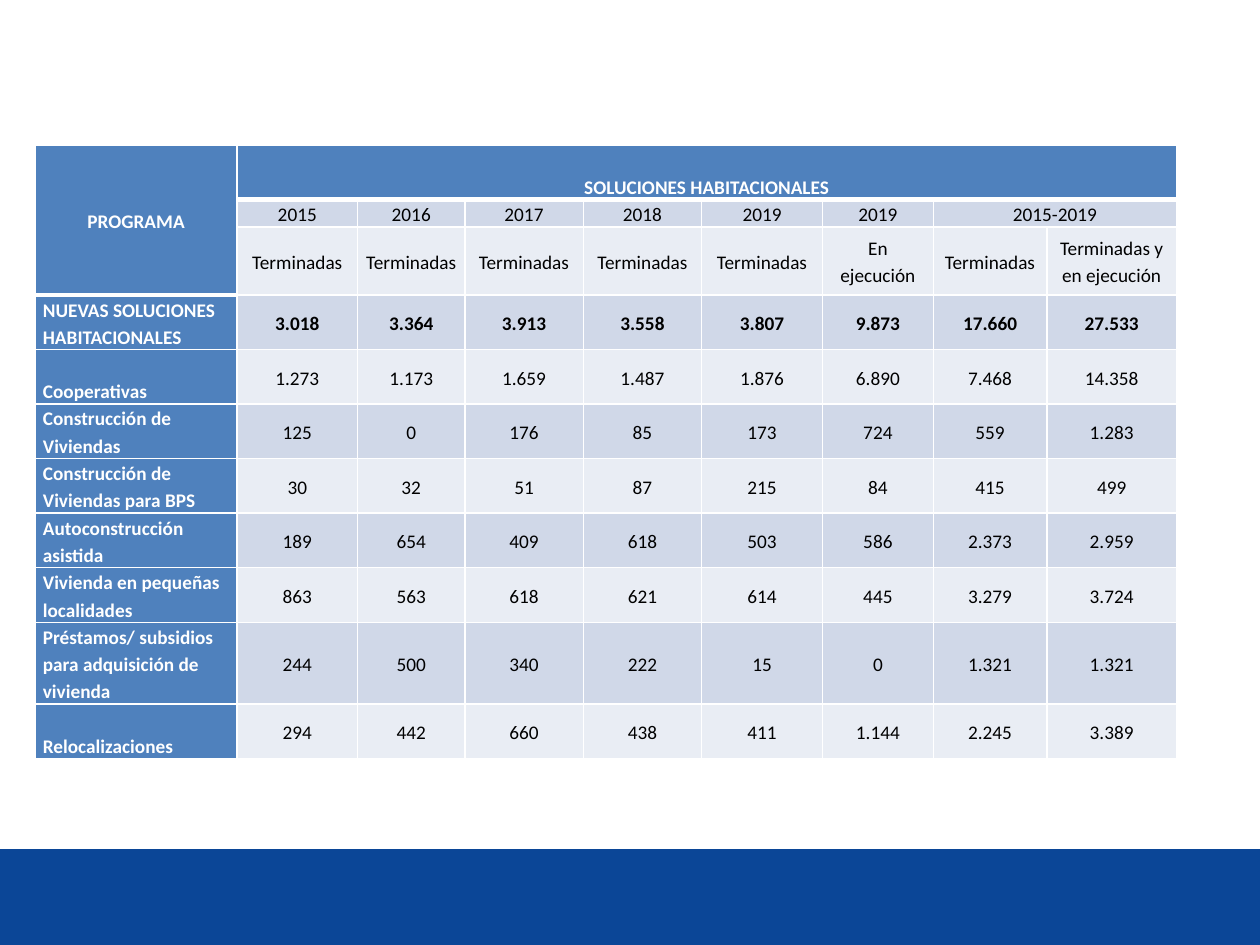
"""Build a slide with a table of housing solutions by programme and year."""
from lxml import etree
from pptx import Presentation
from pptx.dml.color import RGBColor
from pptx.enum.shapes import MSO_SHAPE
from pptx.enum.text import MSO_ANCHOR, PP_ALIGN
from pptx.oxml.ns import qn
from pptx.util import Pt

RECTANGLE = MSO_SHAPE.RECTANGLE
MIDDLE, BOTTOM = MSO_ANCHOR.MIDDLE, MSO_ANCHOR.BOTTOM
LEFT, CENTER = PP_ALIGN.LEFT, PP_ALIGN.CENTER

WHITE, BLACK = "FFFFFF", "000000"
FOOTER_BLUE, HEADER_BLUE = "0B4697", "4F81BD"
BANDS = ("D0D8E8", "E9EDF4")

YEARS = ["2015", "2016", "2017", "2018", "2019", "2019", "2015-2019", ""]
STATES = ["Terminadas"] * 5 + ["En ejecución", "Terminadas", "Terminadas y en ejecución"]
PROGRAMS = [
    ("NUEVAS SOLUCIONES HABITACIONALES",
     ["3.018", "3.364", "3.913", "3.558", "3.807", "9.873", "17.660", "27.533"]),
    ("Cooperativas",
     ["1.273", "1.173", "1.659", "1.487", "1.876", "6.890", "7.468", "14.358"]),
    ("Construcción de Viviendas",
     ["125", "0", "176", "85", "173", "724", "559", "1.283"]),
    ("Construcción de Viviendas para BPS",
     ["30", "32", "51", "87", "215", "84", "415", "499"]),
    ("Autoconstrucción asistida",
     ["189", "654", "409", "618", "503", "586", "2.373", "2.959"]),
    ("Vivienda en pequeñas localidades",
     ["863", "563", "618", "621", "614", "445", "3.279", "3.724"]),
    ("Préstamos/ subsidios para adquisición de vivienda",
     ["244", "500", "340", "222", "15", "0", "1.321", "1.321"]),
    ("Relocalizaciones",
     ["294", "442", "660", "438", "411", "1.144", "2.245", "3.389"]),
]
LOW_LABELS = ("Cooperativas", "Relocalizaciones")
ROWS = [
    ("PROGRAMA", ["SOLUCIONES HABITACIONALES"] + [""] * 7),
    ("", YEARS),
    ("", STATES),
] + PROGRAMS
TOTAL_ROW = 3

COLUMN_WIDTHS = [115.2, 69, 61.2, 67.7, 67.7, 69, 63.4, 64.8, 74.2]
ROW_HEIGHTS = [31, 15.5, 39] + [31] * 6 + [46.5, 31]
MERGES = [((0, 0), (2, 0)), ((0, 1), (0, 8)), ((1, 7), (1, 8))]
TABLE_LEFT, TABLE_TOP = 20.2, 83


def color(value):
    return RGBColor.from_string(value)


def write_text(cell, text, align=CENTER, anchor=MIDDLE, font_color=BLACK, bold=False):
    cell.vertical_anchor = anchor
    cell.margin_left = cell.margin_right = Pt(4.3)
    cell.margin_top = cell.margin_bottom = 0
    paragraph = cell.text_frame.paragraphs[0]
    paragraph.alignment = align
    paragraph.line_spacing = 1.15
    font = paragraph.font
    if text:
        run = paragraph.add_run()
        run.text = text
        font = run.font
    font.name = "Calibri"
    font.size = Pt(11)
    font.bold = bold
    font.color.rgb = color(font_color)


def paint_cell(cell, fill, bottom_width):
    properties = cell._tc.get_or_add_tcPr()
    for side, width in (("L", 1), ("R", 1), ("T", 1), ("B", bottom_width)):
        line = etree.SubElement(properties, qn(f"a:ln{side}"), w=str(Pt(width)))
        line_fill = etree.SubElement(line, qn("a:solidFill"))
        etree.SubElement(line_fill, qn("a:srgbClr"), val=WHITE)
    cell.fill.solid()
    cell.fill.fore_color.rgb = color(fill)


def add_footer(slide):
    footer = slide.shapes.add_shape(RECTANGLE, 0, Pt(485.3), Pt(720), Pt(54.7))
    footer.shadow.inherit = False
    footer.fill.solid()
    footer.fill.fore_color.rgb = color(FOOTER_BLUE)
    footer.line.fill.background()


def add_housing_table(slide):
    frame = slide.shapes.add_table(
        len(ROWS), len(COLUMN_WIDTHS), Pt(TABLE_LEFT), Pt(TABLE_TOP),
        Pt(sum(COLUMN_WIDTHS)), Pt(sum(ROW_HEIGHTS)))
    table = frame.table
    table.first_row = table.horz_banding = False
    for column, width in zip(table.columns, COLUMN_WIDTHS):
        column.width = Pt(width)
    for row, height in zip(table.rows, ROW_HEIGHTS):
        row.height = Pt(height)
    for row_index, (label, values) in enumerate(ROWS):
        for column_index, text in enumerate([label] + values):
            cell = table.cell(row_index, column_index)
            is_label = column_index == 0
            is_header = is_label or row_index == 0
            is_top = row_index == 0 or (is_label and row_index < TOTAL_ROW)
            is_low = is_header and text in LOW_LABELS + ("SOLUCIONES HABITACIONALES",)
            write_text(
                cell, text,
                align=LEFT if is_label and not is_top else CENTER,
                anchor=BOTTOM if is_low else MIDDLE,
                font_color=WHITE if is_header else BLACK,
                bold=is_header or row_index == TOTAL_ROW)
            fill = HEADER_BLUE if is_header else BANDS[(row_index - 1) % 2]
            paint_cell(cell, fill, 3 if is_top else 1)
    for first, last in MERGES:
        table.cell(*first).merge(table.cell(*last))


def main():
    presentation = Presentation()
    presentation.slide_width, presentation.slide_height = Pt(720), Pt(540)
    slide = presentation.slides.add_slide(presentation.slide_layouts[6])
    add_footer(slide)
    add_housing_table(slide)
    presentation.save("out.pptx")


if __name__ == "__main__":
    main()
